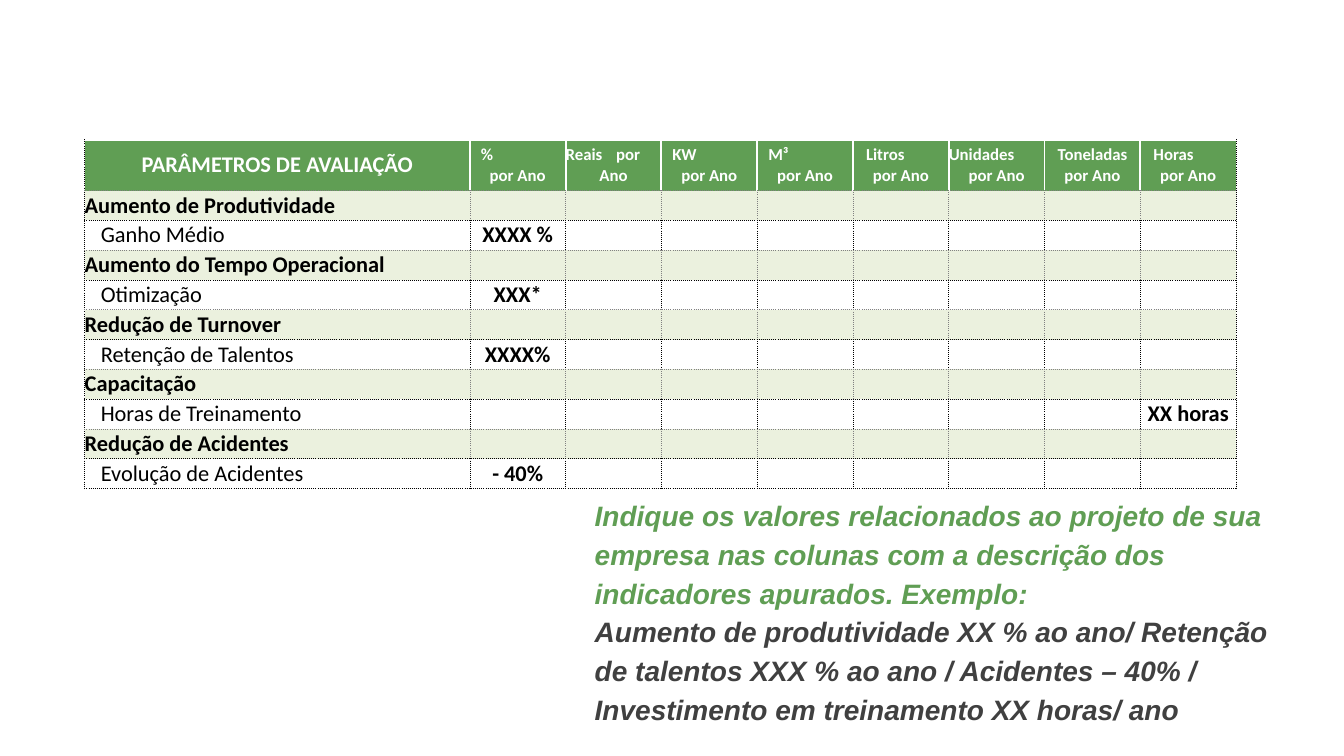
import pptx
import pptx.util
import pptx.oxml
import pptx.oxml.ns
import pptx.dml.color
import pptx.enum.text
from lxml import etree

Inches = pptx.util.Inches
Pt = pptx.util.Pt
RGB = pptx.dml.color.RGBColor
qn = pptx.oxml.ns.qn
ALIGN = pptx.enum.text.PP_ALIGN
ANCHOR = pptx.enum.text.MSO_ANCHOR

GREEN = RGB(0x60, 0x9E, 0x54)
PALE = RGB(0xEB, 0xF1, 0xDE)
WHITE = RGB(0xFF, 0xFF, 0xFF)
BLACK = RGB(0, 0, 0)
GREY = RGB(0x80, 0x80, 0x80)
DARK = RGB(0x40, 0x40, 0x40)

SOLID_WHITE = (WHITE, 1.5, "solid")
DOT_BLACK = (BLACK, 0.5, "sysDot")
DOT_GREY = (GREY, 0.5, "sysDot")

TITLE_FONT = dict(name="Calibri", size=Pt(16), bold=True)
UNIT_FONT = dict(name="Calibri", size=Pt(12), bold=True)
ITEM_FONT = dict(name="Calibri", size=Pt(16), bold=False)
NOTE_FONT = dict(name="Arial", size=Pt(20), bold=True, italic=True)

UNITS = [("%", 0.11), ("Reais", 0), ("KW", 0.11), ("M³", 0.11),
         ("Litros", 0.13), ("Unidades", 0), ("Toneladas", 0.13),
         ("Horas", 0.13)]
SECTIONS = [
    ("Aumento de Produtividade", "Ganho Médio", "XXXX %", 1),
    ("Aumento do Tempo Operacional", "Otimização", "XXX*", 1),
    ("Redução de Turnover", "Retenção de Talentos", "XXXX%", 1),
    ("Capacitação", "Horas de Treinamento", "XX horas", 8),
    ("Redução de Acidentes", "Evolução de Acidentes", "- 40%", 1),
]


def add_run(p, text, color, font):
    r = p.add_run()
    r.text = text
    r.font.color.rgb = color
    for key, value in font.items():
        setattr(r.font, key, value)


def set_cell(cell, fill, borders):
    cell.vertical_anchor = ANCHOR.MIDDLE
    for side in ("left", "right", "top", "bottom"):
        setattr(cell, "margin_" + side, 0)
    tcPr = cell._tc.get_or_add_tcPr()
    for tag, (color, width, dash) in zip(("lnL", "lnR", "lnT", "lnB"), borders):
        ln = etree.SubElement(tcPr, qn("a:" + tag), w=str(Pt(width)))
        solid = etree.SubElement(ln, qn("a:solidFill"))
        etree.SubElement(solid, qn("a:srgbClr"), val=str(color))
        etree.SubElement(ln, qn("a:prstDash"), val=dash)
    cell.fill.solid()
    cell.fill.fore_color.rgb = fill


def fill_row(table, row, fill, inner, top, bottom):
    last = len(table.columns) - 1
    for col in range(last + 1):
        left = DOT_BLACK if col == 0 else inner
        right = DOT_BLACK if col == last else inner
        cell = table.cell(row, col)
        set_cell(cell, fill, (left, right, top, bottom))


def write_cell(cell, text, color, font, align=ALIGN.LEFT):
    p = cell.text_frame.paragraphs[0]
    p.alignment = align
    add_run(p, text, color, font)


def write_unit(cell, unit, indent, width):
    tf = cell.text_frame
    p = tf.paragraphs[0]
    p.alignment = ALIGN.LEFT
    pPr = p._p.get_or_add_pPr()
    pPr.set("marL", str(Inches(indent)))
    pPr.set("indent", "0")
    second = "por Ano"
    if unit == "Reais":
        tabs = etree.SubElement(pPr, qn("a:tabLst"))
        etree.SubElement(tabs, qn("a:tab"), pos=str(Inches(width)), algn="r")
        unit, second = "Reais\tpor", "Ano"
    add_run(p, unit, WHITE, UNIT_FONT)
    p = tf.add_paragraph()
    p.alignment = ALIGN.CENTER
    add_run(p, second, WHITE, UNIT_FONT)


def add_indicators(s, left, top, width, height):
    rows, cols = 1 + 2 * len(SECTIONS), 1 + len(UNITS)
    name_width, header_height = 3.82, 0.5
    unit_width = (width - name_width) / len(UNITS)
    table = s.shapes.add_table(rows, cols, Inches(left), Inches(top),
                               Inches(width), Inches(height)).table
    table.first_row = table.horz_banding = False
    for i, col in enumerate(table.columns):
        col.width = Inches(unit_width if i else name_width)
    for i, row in enumerate(table.rows):
        row.height = Inches((height - header_height) / (rows - 1) if i else header_height)

    fill_row(table, 0, GREEN, SOLID_WHITE, SOLID_WHITE, DOT_GREY)
    write_cell(table.cell(0, 0), "PARÂMETROS DE AVALIAÇÃO", WHITE, TITLE_FONT, ALIGN.CENTER)
    for col, (unit, indent) in enumerate(UNITS, 1):
        write_unit(table.cell(0, col), unit, indent, unit_width - 0.01)

    for i, (section, item, value, col) in enumerate(SECTIONS):
        row = 1 + 2 * i
        bottom = DOT_BLACK if row + 2 == rows else DOT_GREY
        fill_row(table, row, PALE, DOT_GREY, DOT_GREY, DOT_BLACK)
        fill_row(table, row + 1, WHITE, DOT_BLACK, DOT_BLACK, bottom)
        write_cell(table.cell(row, 0), section, BLACK, TITLE_FONT)
        write_cell(table.cell(row + 1, 0), item, BLACK, ITEM_FONT)
        table.cell(row + 1, 0).margin_left = Inches(0.16)
        write_cell(table.cell(row + 1, col), value, BLACK, TITLE_FONT, ALIGN.CENTER)

    for cell in table.iter_cells():
        if not cell.text:
            p = cell.text_frame.paragraphs[0]
            etree.SubElement(p._p, qn("a:endParaRPr"), sz="1600")


def add_note(s, left, top, width, height):
    tf = s.shapes.add_textbox(Inches(left), Inches(top),
                              Inches(width), Inches(height)).text_frame
    tf.word_wrap = True
    p = tf.paragraphs[0]
    p.line_spacing = 1.15
    add_run(p, "Indique os valores relacionados ao projeto de sua empresa nas "
               "colunas com a descrição dos indicadores apurados. Exemplo:",
            GREEN, NOTE_FONT)
    p.add_line_break()
    add_run(p, "Aumento de produtividade XX % ao ano/ Retenção de talentos XXX % "
               "ao ano / Acidentes – 40% / Investimento em treinamento XX horas/ ano",
            DARK, NOTE_FONT)


def main():
    prs = pptx.Presentation()
    prs.slide_width, prs.slide_height = Inches(13.33), Inches(7.5)
    s = prs.slides.add_slide(prs.slide_layouts[6])
    add_indicators(s, 0.84, 1.39, 11.42, 3.46)
    add_note(s, 5.8, 4.85, 7.09, 2.42)
    prs.save("out.pptx")


if __name__ == "__main__":
    main()
